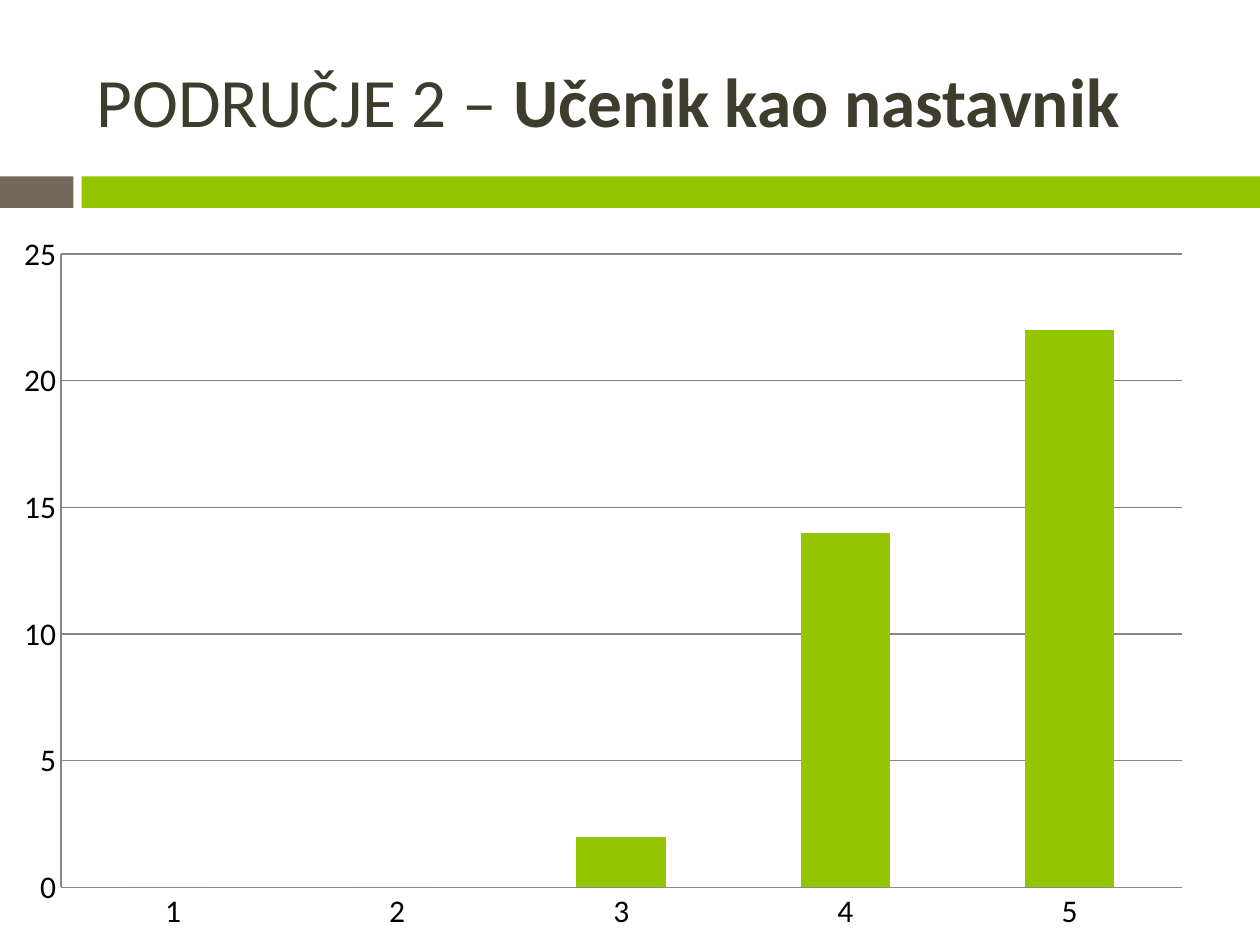
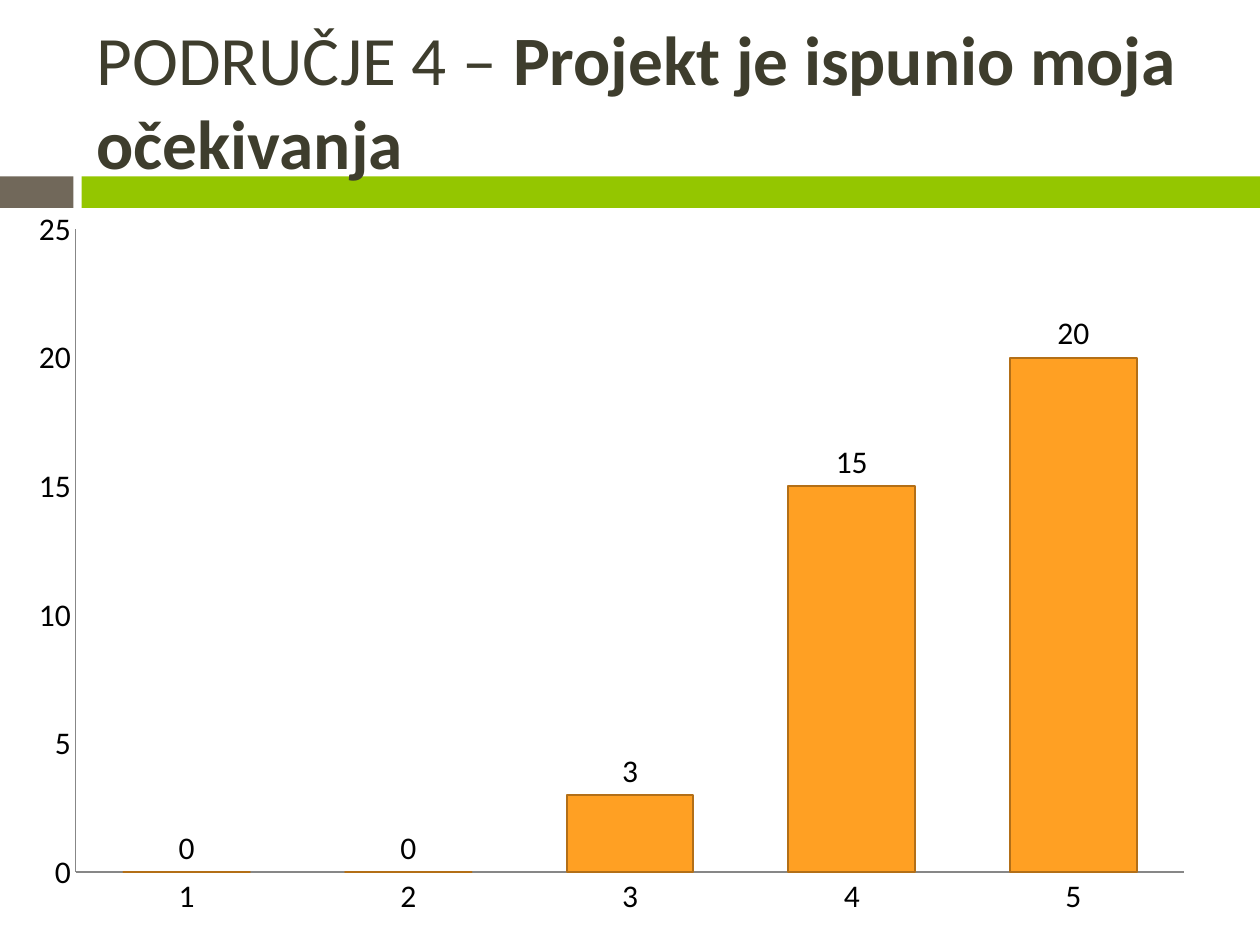
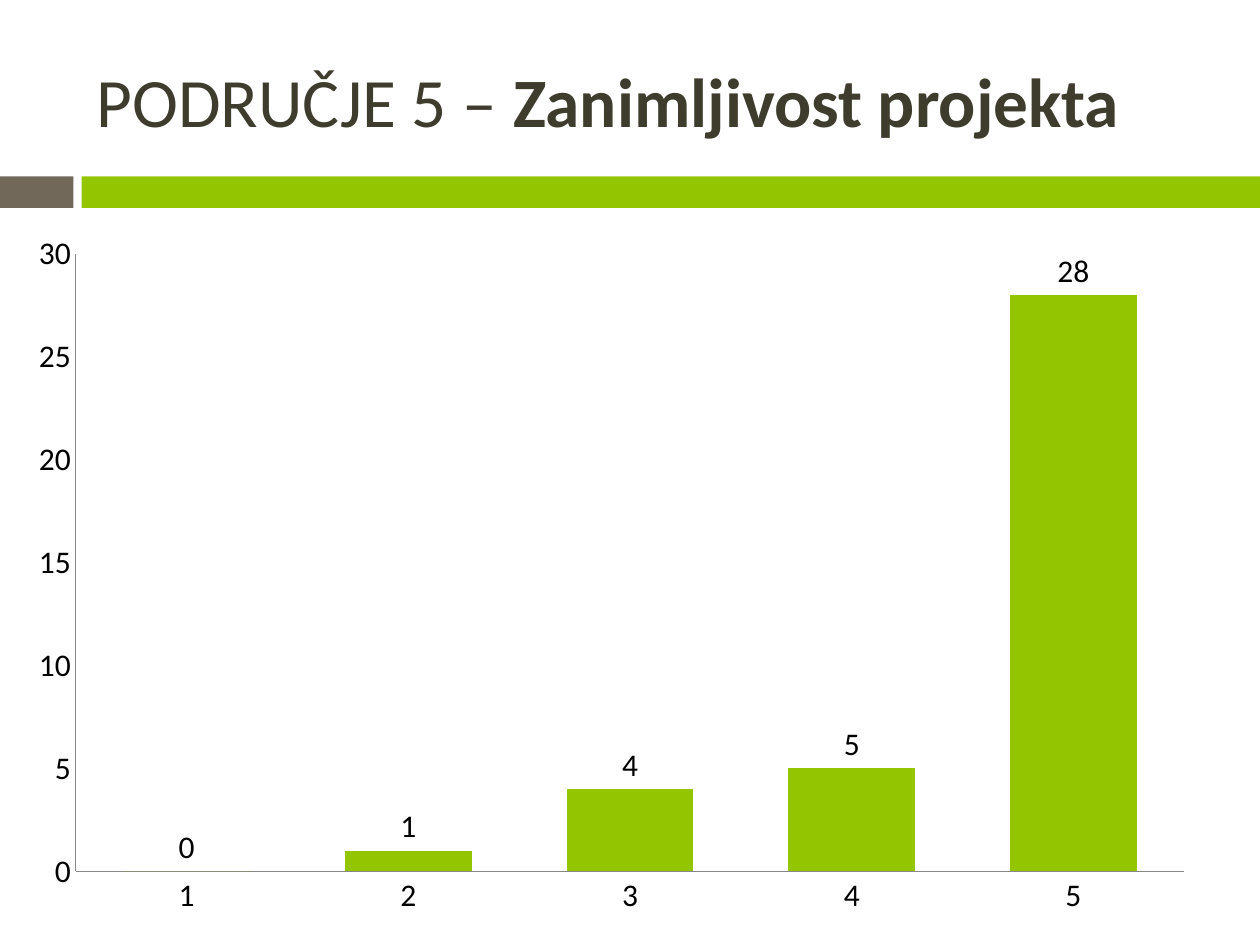
from dataclasses import dataclass

from pptx import Presentation
from pptx.chart.data import CategoryChartData
from pptx.dml.color import RGBColor
from pptx.enum.chart import XL_CHART_TYPE, XL_LABEL_POSITION, XL_TICK_MARK
from pptx.enum.shapes import MSO_SHAPE
from pptx.enum.text import MSO_ANCHOR
from pptx.util import Pt

COLUMNS = XL_CHART_TYPE.COLUMN_CLUSTERED
OUTSIDE = XL_LABEL_POSITION.OUTSIDE_END
NO_TICK = XL_TICK_MARK.NONE
RECTANGLE = MSO_SHAPE.RECTANGLE
MIDDLE = MSO_ANCHOR.MIDDLE

GREEN = RGBColor(0x94, 0xC6, 0x00)
BROWN = RGBColor(0x71, 0x68, 0x5A)
OLIVE = RGBColor(0x3E, 0x3D, 0x2D)
ORANGE = RGBColor(0xFF, 0xA0, 0x23)
DARK_ORANGE = RGBColor(0xB3, 0x6F, 0x17)
GRAY = RGBColor(0x87, 0x87, 0x87)
BLACK = RGBColor(0x00, 0x00, 0x00)
FONT = "Calibri"

PAGE_WIDTH, PAGE_HEIGHT = 720, 540
TITLE_BOX = (48.2, 18, 642.2, 78)
BAND_BOX = (0, 100.8, PAGE_WIDTH, 18)
BAND_SPLIT, BAND_GAP = 42, 4.6
GRADES = ("1", "2", "3", "4", "5")


@dataclass
class Survey:
    """Hold what differs from one survey page to the next."""
    area: int
    topic: str
    counts: tuple
    top_value: int
    box: tuple
    gap: int = 75
    fill: RGBColor = GREEN
    outline: RGBColor | None = None
    gridlines: bool = False
    labels: bool = True


SURVEYS = (
    Survey(2, "Učenik kao nastavnik", (0, 0, 2, 14, 22), 25,
           (0, 126, 689, 414), gap=150, gridlines=True, labels=False),
    Survey(4, "Projekt je ispunio moja očekivanja", (0, 0, 3, 15, 20), 25,
           (8.6, 111.6, 681.8, 419.8), fill=ORANGE, outline=DARK_ORANGE),
    Survey(5, "Zanimljivost projekta", (0, 1, 4, 5, 28), 30,
           (8.6, 126, 681.8, 404.6)),
)


def points(box):
    """Turn a box of plain numbers into lengths."""
    return [Pt(value) for value in box]


def style_font(font, size, color, bold=False):
    """Set the typeface, size, colour and weight of a font."""
    font.name = FONT
    font.size = Pt(size)
    font.color.rgb = color
    font.bold = bold


def add_band(page, box):
    """Draw the two-part band across the given box."""
    left, top, width, height = box
    green_left = BAND_SPLIT + BAND_GAP
    parts = ((0, BAND_SPLIT, BROWN), (green_left, width - green_left, GREEN))
    for offset, part_width, color in parts:
        part = page.shapes.add_shape(
            RECTANGLE, *points((left + offset, top, part_width, height)))
        part.shadow.inherit = False
        part.fill.solid()
        part.fill.fore_color.rgb = color
        part.line.fill.background()


def add_title(page, box, survey):
    """Write the area number followed by its topic in bold."""
    frame = page.shapes.add_textbox(*points(box)).text_frame
    frame.word_wrap = True
    frame.vertical_anchor = MIDDLE
    para = frame.paragraphs[0]
    for text, bold in ((f"PODRUČJE {survey.area} – ", False), (survey.topic, True)):
        span = para.add_run()
        span.text = text
        style_font(span.font, 39.6, OLIVE, bold)


def style_axes(chart, survey):
    """Set the lines, ticks and range of both axes."""
    for axis in (chart.category_axis, chart.value_axis):
        axis.major_tick_mark = NO_TICK
        axis.minor_tick_mark = NO_TICK
        axis.format.line.color.rgb = GRAY
        axis.format.line.width = Pt(0.75)
    scale = chart.value_axis
    scale.minimum_scale = 0
    scale.maximum_scale = survey.top_value
    scale.major_unit = 5
    scale.has_major_gridlines = survey.gridlines
    if survey.gridlines:
        grid_line = scale.major_gridlines.format.line
        grid_line.color.rgb = GRAY
        grid_line.width = Pt(0.75)


def add_grade_chart(page, box, survey):
    """Chart how many answers each grade received."""
    data = CategoryChartData()
    data.categories = GRADES
    data.add_series("Series 1", survey.counts)
    chart = page.shapes.add_chart(COLUMNS, *points(box), data).chart
    chart.has_title = False
    chart.has_legend = False
    style_font(chart.font, 18, BLACK)
    style_axes(chart, survey)

    plot = chart.plots[0]
    plot.vary_by_categories = False
    plot.gap_width = survey.gap
    columns = plot.series[0].format
    columns.fill.solid()
    columns.fill.fore_color.rgb = survey.fill
    if survey.outline:
        columns.line.color.rgb = survey.outline
        columns.line.width = Pt(1)
    else:
        columns.line.fill.background()
    if survey.labels:
        labels = plot.series[0].data_labels
        labels.show_value = True
        labels.position = OUTSIDE
        style_font(labels.font, 18, BLACK)


def add_survey_page(deck, survey):
    """Build one page with its band, title and chart."""
    page = deck.slides.add_slide(deck.slide_layouts[6])
    add_band(page, BAND_BOX)
    add_title(page, TITLE_BOX, survey)
    add_grade_chart(page, survey.box, survey)


def main():
    """Build the deck and save it."""
    deck = Presentation()
    deck.slide_width = Pt(PAGE_WIDTH)
    deck.slide_height = Pt(PAGE_HEIGHT)
    for survey in SURVEYS:
        add_survey_page(deck, survey)
    deck.save("out.pptx")


if __name__ == "__main__":
    main()
